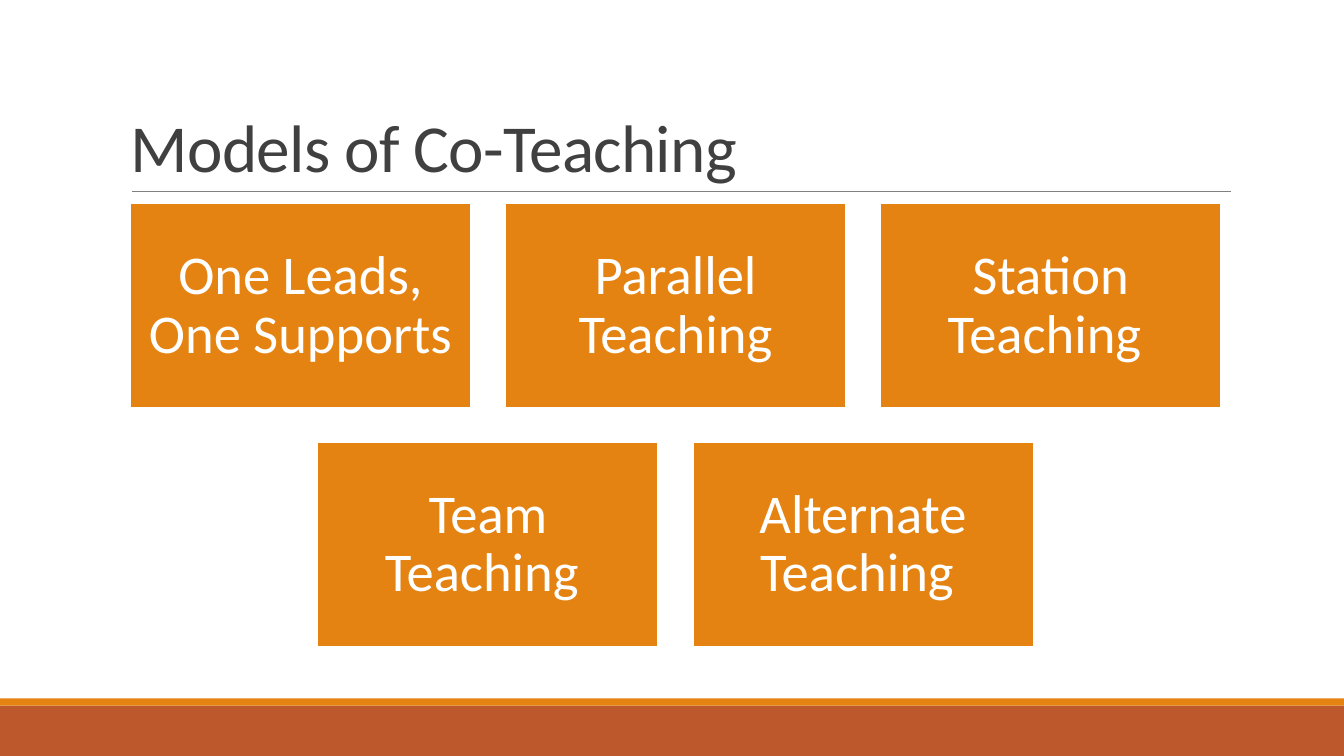
from lxml import etree
from pptx import Presentation
from pptx import util as u
from pptx.dml.color import RGBColor
from pptx.enum import shapes, text
from pptx.oxml.ns import qn

PX = 9144  # EMU per px, 100 px to the inch


def px(length):
    return u.Emu(length * PX)


def color(value):
    return RGBColor.from_string(value)


class SlideBuilder:
    font = "Calibri"
    orange = "E48312"
    rust = "BD582C"
    white = "FFFFFF"
    dark = "404040"
    gray = "808080"

    def __init__(self, page):
        self.page = page

    def rect(self, left, top, width, height, fill, outline=None):
        box = self.page.shapes.add_shape(
            shapes.MSO_SHAPE.RECTANGLE, px(left), px(top), px(width), px(height))
        box.shadow.inherit = False
        box.fill.solid()
        box.fill.fore_color.rgb = color(fill)
        if outline:
            box.line.color.rgb = color(outline)
            box.line.width = u.Pt(1.25)
        else:
            box.line.fill.background()
        return box

    def rule(self, left, right, top):
        line = self.page.shapes.add_connector(
            shapes.MSO_CONNECTOR.STRAIGHT, px(left), px(top), px(right), px(top))
        line.line.color.rgb = color(self.gray)
        line.line.width = u.Pt(0.5)
        etree.SubElement(line._element.spPr, qn("a:effectLst"))

    def label(self, box, words, size, fill, align, anchor, spacing, inset_x, inset_y):
        frame = box.text_frame
        frame.word_wrap = True
        frame.vertical_anchor = anchor
        frame.margin_left = frame.margin_right = px(inset_x)
        frame.margin_top = frame.margin_bottom = px(inset_y)
        frame.text = words
        para = frame.paragraphs[0]
        para.alignment = align
        para.line_spacing = spacing
        span = para.runs[0]
        span.font.name = self.font
        span.font.size = u.Pt(size)
        span.font.color.rgb = color(fill)
        return span

    def title(self, words, left, top, width, height):
        box = self.page.shapes.add_textbox(px(left), px(top), px(width), px(height))
        span = self.label(box, words, 48, self.dark, text.PP_ALIGN.LEFT,
                          text.MSO_ANCHOR.BOTTOM, 0.85, 10, 5)
        span._r.get_or_add_rPr().set("spc", "-50")

    def card(self, words, left, top, width, height):
        box = self.rect(left, top, width, height, self.orange, self.white)
        self.label(box, words, 39, self.white, text.PP_ALIGN.CENTER,
                   text.MSO_ANCHOR.MIDDLE, 0.9, 16, 16)


def main():
    deck = Presentation()
    deck.slide_width, deck.slide_height = u.Inches(13.33), u.Inches(7.5)
    slide = SlideBuilder(deck.slides.add_slide(deck.slide_layouts[6]))

    # Footer bands
    slide.rect(0, 700, 1333, 50, slide.rust)
    slide.rect(0, 693, 1333, 7, slide.orange)

    # Title and its rule
    slide.rule(131, 1221, 190)
    slide.title("Models of Co-Teaching", 120, 31, 1100, 159)

    # Teaching models: the second row is set in by half a column
    column_step, row_step = 372, 237
    rows = [
        ["One Leads, One Supports", "Parallel Teaching", "Station Teaching "],
        ["Team Teaching ", "Alternate Teaching "],
    ]
    for row, models in enumerate(rows):
        left = 129 + row * column_step // 2
        for column, model in enumerate(models):
            slide.card(model, left + column * column_step, 202 + row * row_step, 338, 203)

    deck.save("out.pptx")


if __name__ == "__main__":
    main()
